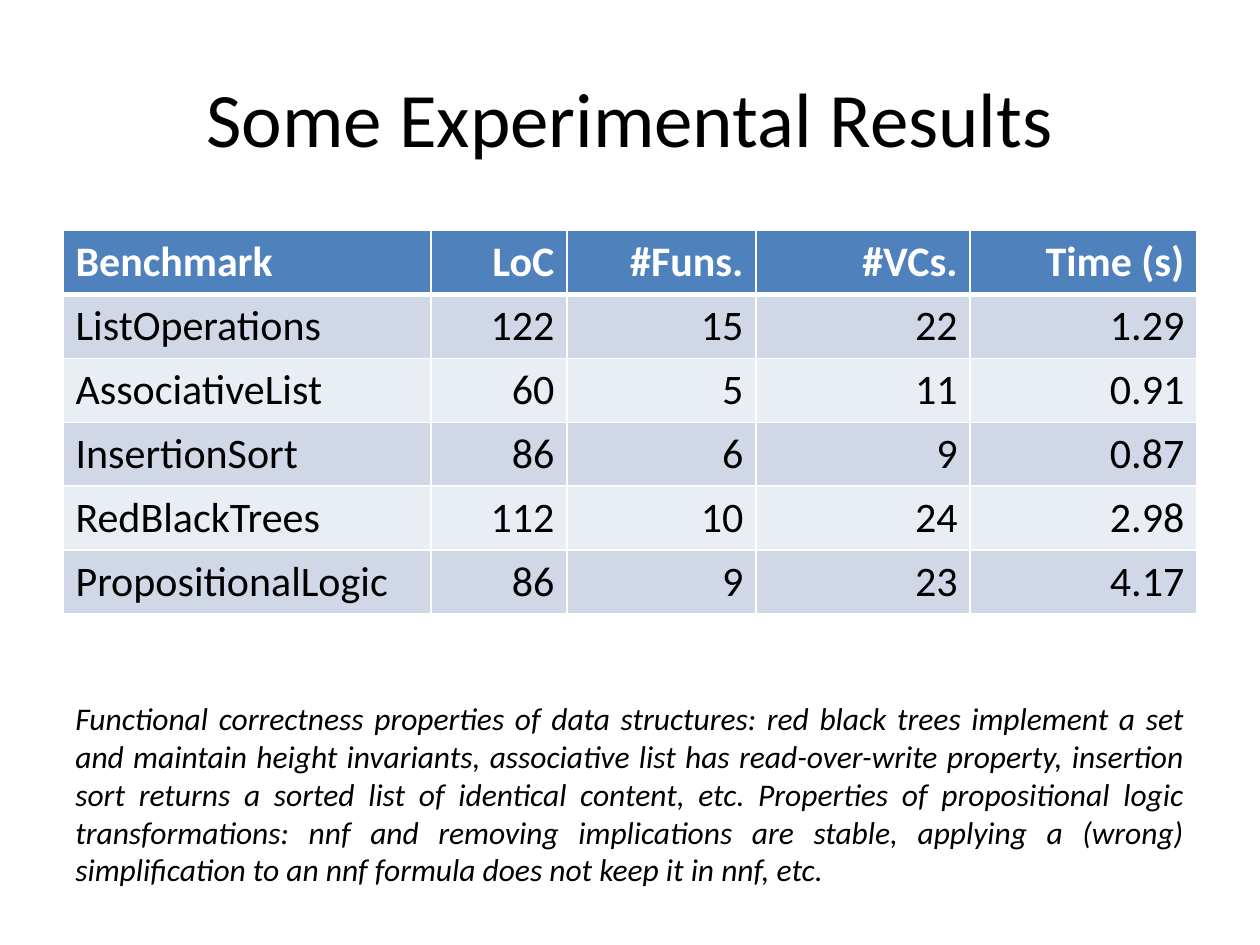
from lxml import etree
from pptx import Presentation
from pptx.dml.color import RGBColor
from pptx.enum.text import MSO_ANCHOR, MSO_AUTO_SIZE, PP_ALIGN
from pptx.oxml.ns import qn
from pptx.util import Inches, Pt

LEFT, CENTER, RIGHT, JUSTIFY = PP_ALIGN.LEFT, PP_ALIGN.CENTER, PP_ALIGN.RIGHT, PP_ALIGN.JUSTIFY
MIDDLE = MSO_ANCHOR.MIDDLE
FIT_SHAPE = MSO_AUTO_SIZE.SHAPE_TO_FIT_TEXT

BLACK = RGBColor(0x00, 0x00, 0x00)
WHITE = RGBColor(0xFF, 0xFF, 0xFF)
BLUE = RGBColor(0x4F, 0x81, 0xBD)
BAND_DARK = RGBColor(0xD0, 0xD8, 0xE8)
BAND_LIGHT = RGBColor(0xE9, 0xED, 0xF4)

COLUMN_WIDTHS = [2.92, 1.08, 1.5, 1.7, 1.8]
ROW_HEIGHT = 0.47
RESULTS = [
    ["Benchmark", "LoC", "#Funs.", "#VCs.", "Time (s)"],
    ["ListOperations", "122", "15", "22", "1.29"],
    ["AssociativeList", "60", "5", "11", "0.91"],
    ["InsertionSort", "86", "6", "9", "0.87"],
    ["RedBlackTrees", "112", "10", "24", "2.98"],
    ["PropositionalLogic", "86", "9", "23", "4.17"],
]
SUMMARY = (
    "Functional correctness properties of data structures: red black trees implement a set "
    "and maintain height invariants, associative list has read-over-write property, insertion "
    "sort returns a sorted list of identical content, etc. Properties of propositional logic "
    "transformations: nnf and removing implications are stable, applying a (wrong) "
    "simplification to an nnf formula does not keep it in nnf, etc."
)


class SlideBuilder:
    font = "Calibri"

    def __init__(self, slide):
        self.slide = slide

    def set_text(self, tf, text, size, align, color=BLACK, bold=False, italic=False):
        p = tf.paragraphs[0]
        p.text = text
        p.alignment = align
        p.font.name = self.font
        p.font.size = Pt(size)
        p.font.color.rgb = color
        p.font.bold = bold
        p.font.italic = italic

    def title(self, text, left, top, width, height):
        sp = self.slide.shapes.title
        sp.left, sp.top = Inches(left), Inches(top)
        sp.width, sp.height = Inches(width), Inches(height)
        sp.text_frame.vertical_anchor = MIDDLE
        self.set_text(sp.text_frame, text, 44, CENTER)

    def text(self, text, left, top, width, height):
        sp = self.slide.shapes.add_textbox(
            Inches(left), Inches(top), Inches(width), Inches(height))
        tf = sp.text_frame
        tf.word_wrap = True
        tf.auto_size = FIT_SHAPE
        self.set_text(tf, text, 18, JUSTIFY, italic=True)

    def borders(self, cell, top, bottom):
        tcPr = cell._tc.get_or_add_tcPr()
        widths = {"a:lnL": 1, "a:lnR": 1, "a:lnT": top, "a:lnB": bottom}
        for i, (tag, width) in enumerate(widths.items()):
            ln = etree.Element(qn(tag), w=str(Pt(width)))
            fill = etree.SubElement(ln, qn("a:solidFill"))
            etree.SubElement(fill, qn("a:srgbClr"), val=str(WHITE))
            tcPr.insert(i, ln)

    def table(self, rows, left, top, widths, row_height):
        table = self.slide.shapes.add_table(
            len(rows), len(widths), Inches(left), Inches(top),
            Inches(sum(widths)), Inches(row_height * len(rows))).table
        for column, width in zip(table.columns, widths):
            column.width = Inches(width)
        for r, values in enumerate(rows):
            table.rows[r].height = Inches(row_height)
            header = r == 0
            fill = BLUE if header else BAND_DARK if r % 2 else BAND_LIGHT
            for c, value in enumerate(values):
                cell = table.cell(r, c)
                cell.fill.solid()
                cell.fill.fore_color.rgb = fill
                self.borders(cell, 3 if r == 1 else 1, 3 if header else 1)
                self.set_text(cell.text_frame, value, 24, RIGHT if c else LEFT,
                              WHITE if header else BLACK, bold=header)


def main():
    prs = Presentation()
    prs.slide_width, prs.slide_height = Inches(10), Inches(7.5)
    s = SlideBuilder(prs.slides.add_slide(prs.slide_layouts[5]))
    s.title("Some Experimental Results", 0.5, 0.3, 9, 1.25)
    s.table(RESULTS, 0.5, 1.83, COLUMN_WIDTHS, ROW_HEIGHT)
    s.text(SUMMARY, 0.5, 5.5, 9, 1.62)
    prs.save("out.pptx")


if __name__ == "__main__":
    main()
